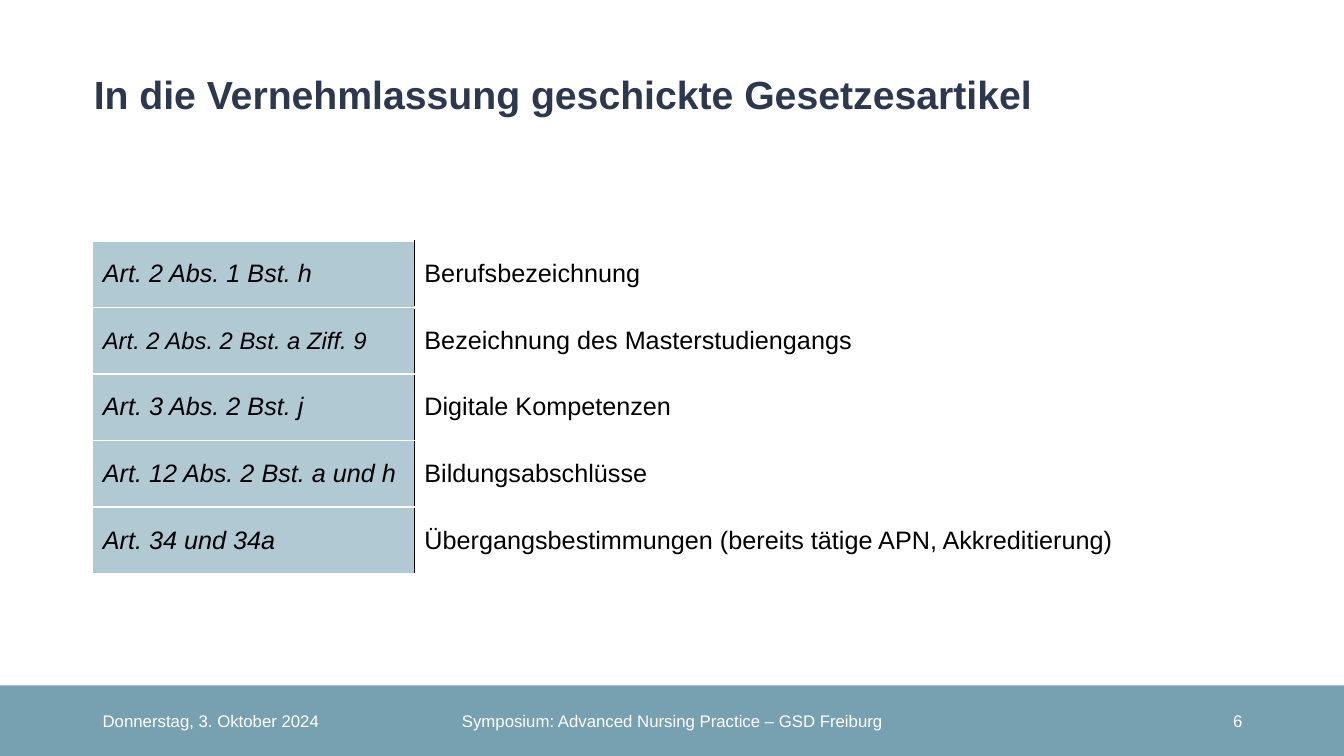
from lxml import etree
from pptx import Presentation
from pptx import util as u
from pptx.dml.color import RGBColor
from pptx.enum import shapes, text
from pptx.oxml.ns import qn

COLORS = {
    "navy": "2D384F",
    "teal": "77A0B0",
    "light_teal": "B1C9D3",
    "white": "FFFFFF",
    "black": "000000",
}

ARTICLES = [
    ("Art. 2 Abs. 1 Bst. h", "Berufsbezeichnung"),
    ("Art. 2 Abs. 2 Bst. a Ziff. 9", "Bezeichnung des Masterstudiengangs"),
    ("Art. 3 Abs. 2 Bst. j", "Digitale Kompetenzen"),
    ("Art. 12 Abs. 2 Bst. a und h", "Bildungsabschlüsse"),
    ("Art. 34 und 34a", "Übergangsbestimmungen (bereits tätige APN, Akkreditierung)"),
]
ARTICLE_SIZES = {1: 17}

FOOTER = [
    ("Donnerstag, 3. Oktober 2024", 0.92, 3, text.PP_ALIGN.LEFT),
    ("Symposium: Advanced Nursing Practice – GSD Freiburg", 4.42, 4.5, text.PP_ALIGN.CENTER),
    ("6", 9.42, 3, text.PP_ALIGN.RIGHT),
]


def color(name):
    return RGBColor.from_string(COLORS[name])


def set_text(frame, wording, color_name, align=text.PP_ALIGN.LEFT, **font_format):
    frame.word_wrap = True
    paragraph = frame.paragraphs[0]
    paragraph.alignment = align
    run = paragraph.add_run()
    run.text = wording
    run.font.color.rgb = color(color_name)
    for name, value in {"name": "Arial", **font_format}.items():
        setattr(run.font, name, value)
    return paragraph


def place(shape, left, top, width, height):
    values = {"left": left, "top": top, "width": width, "height": height}
    for name, value in values.items():
        setattr(shape, name, u.Inches(value))


def add_title(slide, wording):
    title = slide.shapes.title
    place(title, 0.83, 0.7, 11.8, 0.42)
    frame = title.text_frame
    frame.auto_size = text.MSO_AUTO_SIZE.NONE
    frame.vertical_anchor = text.MSO_ANCHOR.TOP
    paragraph = set_text(frame, wording, "navy", size=u.Pt(28), bold=True)
    paragraph.line_spacing = 0.9


def add_footer_bar(slide):
    bar = slide.shapes.add_shape(
        shapes.MSO_SHAPE.RECTANGLE, 0, u.Inches(6.8), u.Inches(13.33), u.Inches(0.7)
    )
    bar.shadow.inherit = False
    bar.fill.solid()
    bar.fill.fore_color.rgb = color("teal")
    bar.line.fill.background()


def add_footer_text(slide, wording, left, width, align):
    box = slide.shapes.add_textbox(
        u.Inches(left), u.Inches(6.95), u.Inches(width), u.Inches(0.4)
    )
    box.text_frame.vertical_anchor = text.MSO_ANCHOR.MIDDLE
    set_text(box.text_frame, wording, "white", align, size=u.Pt(12))


def set_borders(cell, borders):
    properties = cell._tc.get_or_add_tcPr()
    for side in "LRTB":
        if side in borders:
            name, width = borders[side]
            line = etree.SubElement(properties, qn(f"a:ln{side}"), w=str(u.Pt(width)))
            fill = etree.SubElement(line, qn("a:solidFill"))
            etree.SubElement(fill, qn("a:srgbClr"), val=COLORS[name])


def format_cell(cell, wording, fill, borders, **font_format):
    set_borders(cell, borders)
    cell.fill.solid()
    cell.fill.fore_color.rgb = color(fill)
    cell.vertical_anchor = text.MSO_ANCHOR.MIDDLE
    set_text(cell.text_frame, wording, "black", **font_format)


def add_article_table(slide):
    table = slide.shapes.add_table(
        len(ARTICLES), 2, u.Inches(0.92), u.Inches(2.39), u.Inches(11.73), u.Inches(3.3)
    ).table
    table.first_row = table.horz_banding = False
    for column, width in zip(table.columns, (3.19, 8.54)):
        column.width = u.Inches(width)
    for index, (article, subject) in enumerate(ARTICLES):
        table.rows[index].height = u.Inches(0.66)
        article_borders = {"R": ("black", 1)}
        subject_borders = {
            "L": ("black", 1),
            "R": ("white", 1),
            "T": ("white", 1),
            "B": ("white", 3 if index == 0 else 1),
        }
        format_cell(
            table.cell(index, 0), article, "light_teal", article_borders,
            size=u.Pt(ARTICLE_SIZES.get(index, 18)), italic=True,
        )
        format_cell(
            table.cell(index, 1), subject, "white", subject_borders,
            size=u.Pt(18), italic=False,
        )


def main():
    presentation = Presentation()
    presentation.slide_width = u.Inches(13.33)
    presentation.slide_height = u.Inches(7.5)
    slide = presentation.slides.add_slide(presentation.slide_layouts[5])
    add_footer_bar(slide)
    add_title(slide, "In die Vernehmlassung geschickte Gesetzesartikel")
    for footer in FOOTER:
        add_footer_text(slide, *footer)
    add_article_table(slide)
    presentation.save("out.pptx")


if __name__ == "__main__":
    main()
